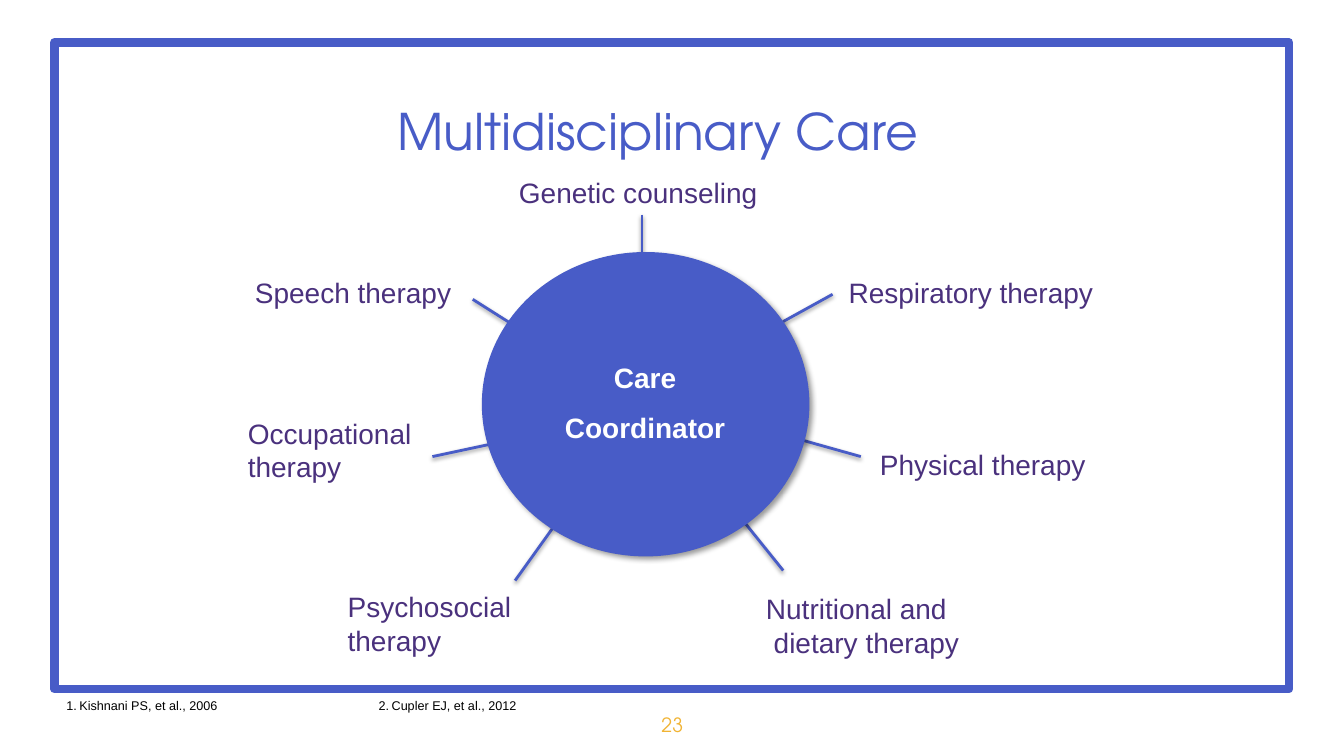
from dataclasses import dataclass

from lxml.etree import SubElement
from pptx import Presentation
from pptx.dml.color import RGBColor
from pptx.enum.shapes import MSO_CONNECTOR as CONN, MSO_SHAPE as SHAPE
from pptx.enum.text import MSO_ANCHOR as ANCHOR, MSO_AUTO_SIZE as FIT, PP_ALIGN as ALIGN
from pptx.oxml.ns import qn
from pptx.util import Emu, Inches, Pt

# Grid: 40 columns by 22.5 rows of square cells
COLS, ROWS = 40, 22.5
CELL = Inches(13.333) / COLS


@dataclass(frozen=True)
class Theme:
    blue: str = "485CC7"
    purple: str = "4A317D"
    gold: str = "F1B434"
    black: str = "000000"
    white: str = "FFFFFF"
    heading_font: str = "TeX Gyre Adventor"
    body_font: str = "Arial"
    title_size: float = 36
    label_size: float = 20
    number_size: float = 14
    reference_size: float = 9
    hub_leading: float = 36
    frame_width: float = 6
    spoke_width: float = 2


@dataclass(frozen=True)
class Box:
    col: float
    row: float
    width: float
    height: float

    def emu(self) -> tuple:
        return tuple(grid(v) for v in (self.col, self.row, self.width, self.height))


@dataclass(frozen=True)
class Style:
    font: str
    size: float
    color: str
    bold: bool = False
    align: ALIGN = ALIGN.LEFT


@dataclass(frozen=True)
class Shadow:
    alpha: int
    blur: float
    distance: float
    angle: int


@dataclass(frozen=True)
class Therapy:
    text: str
    box: Box
    spoke: tuple
    second_line_indent: float = 0


THEME = Theme()
TITLE = Style(THEME.heading_font, THEME.title_size, THEME.blue, align=ALIGN.CENTER)
NUMBER = Style(THEME.heading_font, THEME.number_size, THEME.gold, align=ALIGN.CENTER)
LABEL = Style(THEME.body_font, THEME.label_size, THEME.purple)
HUB = Style(THEME.body_font, THEME.label_size, THEME.white, True, ALIGN.CENTER)
REFERENCE = Style(THEME.body_font, THEME.reference_size, THEME.black)
SPOKE_SHADOW = Shadow(38, 3.1, 1.6, 90)
HUB_SHADOW = Shadow(40, 4, 3, 45)

THERAPIES = [
    Therapy("Genetic counseling", Box(15.15, 5.07, 7.77, 1.32), (19.11, 6.39, 19.11, 7.95)),
    Therapy("Respiratory therapy", Box(24.96, 8.04, 7.98, 1.29), (24.78, 8.76, 23.31, 9.57)),
    Therapy("Speech therapy", Box(7.29, 8.04, 6.51, 1.32), (14.07, 8.91, 15.21, 9.63)),
    Therapy("Occupational\ntherapy", Box(7.08, 12.24, 5.73, 2.31), (12.87, 13.59, 15.12, 13.11)),
    Therapy("Psychosocial\ntherapy", Box(10.05, 17.4, 5.52, 2.31), (15.33, 17.28, 16.47, 15.69)),
    Therapy("Nutritional and\ndietary therapy", Box(22.5, 17.46, 6.63, 2.31),
            (23.31, 16.98, 22.08, 15.45), 0.23),
    Therapy("Physical therapy", Box(25.89, 13.17, 6.72, 1.29), (25.62, 13.59, 23.91, 13.11)),
]


def grid(cells: float) -> Emu:
    return Emu(round(cells * CELL))


def rgb(color: str) -> RGBColor:
    return RGBColor.from_string(color)


def add_text(slide, text: str, box: Box, style: Style, wrap: bool = True,
             anchor: ANCHOR = ANCHOR.TOP, grow: bool = True):
    tf = slide.shapes.add_textbox(*box.emu()).text_frame
    tf.text = text
    tf.word_wrap = wrap
    tf.vertical_anchor = anchor
    tf.auto_size = FIT.SHAPE_TO_FIT_TEXT if grow else FIT.NONE
    for p in tf.paragraphs:
        p.alignment = style.align
        for r in p.runs:
            r.font.name = style.font
            r.font.size = Pt(style.size)
            r.font.bold = style.bold
            r.font.color.rgb = rgb(style.color)
    return tf


def add_shadow(sp, shadow: Shadow) -> None:
    props = sp._element.spPr
    for old in props.findall(qn("a:effectLst")):
        props.remove(old)
    effects = SubElement(props, qn("a:effectLst"))
    outer = SubElement(effects, qn("a:outerShdw"), blurRad=str(Pt(shadow.blur)),
                       dist=str(Pt(shadow.distance)), dir=str(shadow.angle * 60000),
                       rotWithShape="0")
    color = SubElement(outer, qn("a:srgbClr"), val=THEME.black)
    SubElement(color, qn("a:alpha"), val=str(shadow.alpha * 1000))


def add_frame(slide, box: Box) -> None:
    sp = slide.shapes.add_shape(SHAPE.RECTANGLE, *box.emu())
    sp.shadow.inherit = False
    sp.fill.background()
    sp.line.color.rgb = rgb(THEME.blue)
    sp.line.width = Pt(THEME.frame_width)
    SubElement(sp.line._get_or_add_ln(), qn("a:round"))


def add_references(slide, text: str, box: Box) -> None:
    tf = add_text(slide, text, box, REFERENCE)
    tf._txBody.bodyPr.set("numCol", "3")
    for p in tf.paragraphs:
        props = p._p.get_or_add_pPr()
        props.set("marL", str(Inches(0.13)))
        props.set("indent", str(Inches(-0.13)))
        SubElement(props, qn("a:buFont"), typeface=THEME.body_font)
        SubElement(props, qn("a:buAutoNum"), type="arabicPeriod")


def add_label(slide, therapy: Therapy) -> None:
    tf = add_text(slide, therapy.text, therapy.box, LABEL, wrap=False)
    if therapy.second_line_indent:
        props = tf.paragraphs[1]._p.get_or_add_pPr()
        props.set("marL", str(grid(therapy.second_line_indent)))


def add_spoke(slide, ends: tuple) -> None:
    line = slide.shapes.add_connector(CONN.STRAIGHT, *(grid(v) for v in ends))
    line.line.color.rgb = rgb(THEME.blue)
    line.line.width = Pt(THEME.spoke_width)
    add_shadow(line, SPOKE_SHADOW)


def add_hub(slide, text: str, circle: Box, text_box: Box) -> None:
    sp = slide.shapes.add_shape(SHAPE.OVAL, *circle.emu())
    sp.fill.solid()
    sp.fill.fore_color.rgb = rgb(THEME.blue)
    sp.line.fill.background()
    add_shadow(sp, HUB_SHADOW)
    tf = add_text(slide, text, text_box, HUB)
    tf.margin_left = tf.margin_right = tf.margin_bottom = 0
    tf.margin_top = Inches(0.01)
    tf.paragraphs[0].line_spacing = Pt(THEME.hub_leading)


def main() -> None:
    prs = Presentation()
    prs.slide_width, prs.slide_height = grid(COLS), grid(ROWS)
    slide = prs.slides.add_slide(prs.slide_layouts[6])

    # Frame, page number, title and references
    add_frame(slide, Box(1.62, 1.26, 36.75, 19.25))
    add_text(slide, "23", Box(19.14, 21.12, 1.74, 0.9), NUMBER,
             anchor=ANCHOR.MIDDLE, grow=False)
    add_text(slide, "Multidisciplinary Care", Box(2.13, 2.01, 34.89, 3.75), TITLE,
             anchor=ANCHOR.MIDDLE, grow=False)
    add_references(slide, "Kishnani PS, et al., 2006\nCupler EJ, et al., 2012",
                   Box(1.68, 20.61, 28.47, 0.75))

    # Therapies around the hub
    for therapy in THERAPIES:
        add_label(slide, therapy)
        add_spoke(slide, therapy.spoke)
    add_hub(slide, "Care Coordinator", Box(14.34, 7.5, 9.75, 9.06),
            Box(15.84, 10.2, 6.72, 2.97))

    prs.save("out.pptx")


if __name__ == "__main__":
    main()
